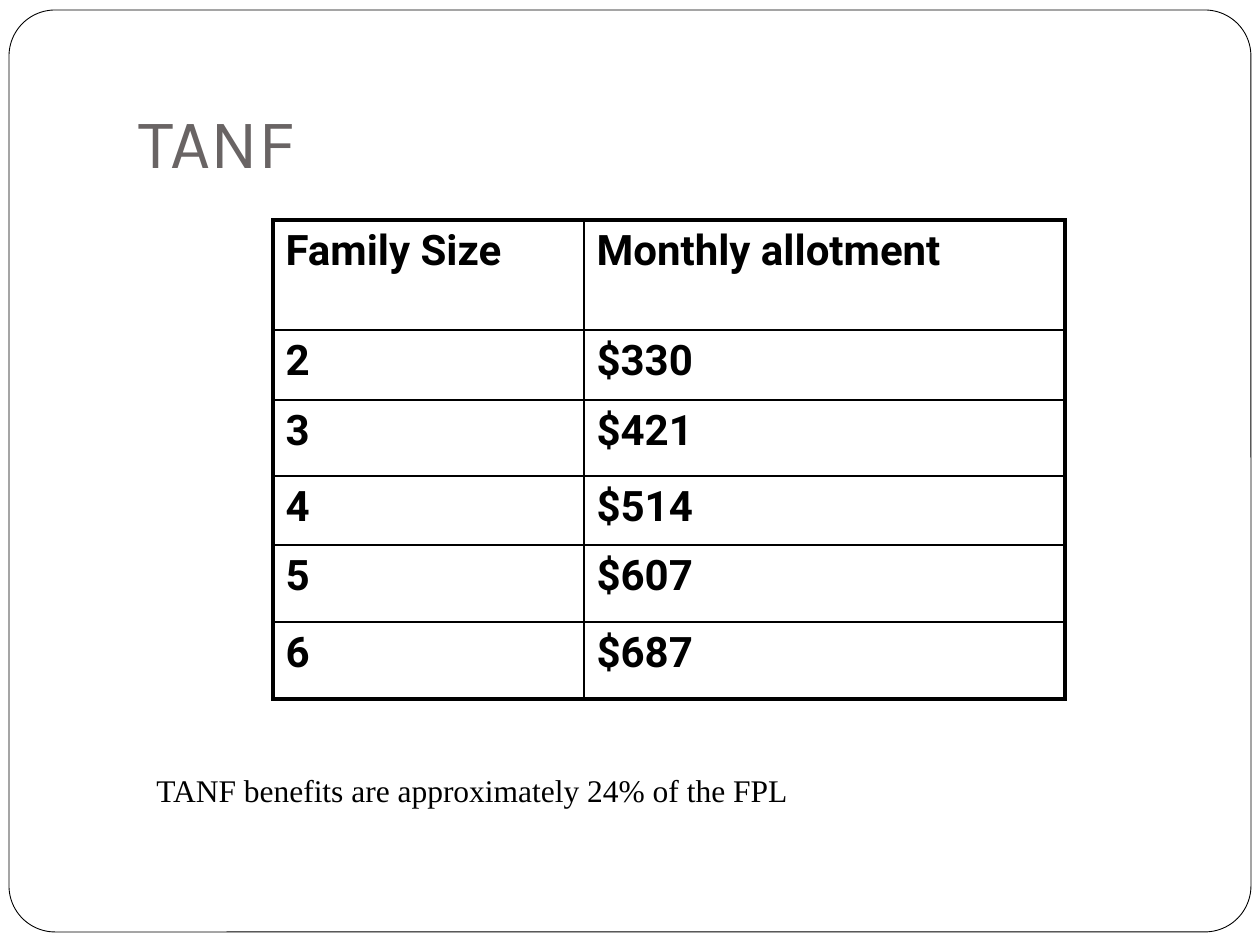
from lxml import etree
from pptx import Presentation
from pptx import util as u
from pptx.dml.color import RGBColor
from pptx.enum import shapes, text
from pptx.oxml import ns

PX = u.Inches(1) / 126
WHITE = RGBColor(0xFF, 0xFF, 0xFF)
BLACK = RGBColor(0, 0, 0)
GRAY = RGBColor(0x69, 0x64, 0x64)

ROWS = [
    ("Family Size", "Monthly allotment"),
    ("2", "$330"),
    ("3", "$421"),
    ("4", "$514"),
    ("5", "$607"),
    ("6", "$687"),
]
COL_WIDTHS = [311, 481]
ROW_HEIGHTS = [110, 70, 76, 69, 77, 77]
OUTER, INNER = 2.25, 1


def px(*lengths):
    return [u.Emu(round(n * PX)) for n in lengths]


def write(tf, content, font, size, color=BLACK, bold=False):
    r = tf.paragraphs[0].add_run()
    r.text = content
    r.font.name = font
    r.font.size = u.Pt(size)
    r.font.bold = bold
    r.font.color.rgb = color


def add_text(slide, box, content, anchor=text.MSO_ANCHOR.TOP, bottom=0.05, **fmt):
    tf = slide.shapes.add_textbox(*px(*box)).text_frame
    tf.word_wrap = True
    tf.vertical_anchor = anchor
    tf.margin_bottom = u.Inches(bottom)
    write(tf, content, **fmt)


def add_frame(slide):
    sp = slide.shapes.add_shape(shapes.MSO_SHAPE.ROUNDED_RECTANGLE, *px(9, 10, 1242, 922))
    sp.adjustments[0] = 0.05
    sp.shadow.inherit = False
    sp.fill.solid()
    sp.fill.fore_color.rgb = WHITE
    sp.line.color.rgb = BLACK
    sp.line.width = u.Pt(0.5)


def set_border(cell, side, points):
    tc_pr = cell._tc.get_or_add_tcPr()
    ln = etree.SubElement(tc_pr, ns.qn(f"a:ln{side}"), w=str(u.Pt(points)))
    fill = etree.SubElement(ln, ns.qn("a:solidFill"))
    etree.SubElement(fill, ns.qn("a:srgbClr"), val=str(BLACK))


def add_allotment_table(slide):
    last_row, last_col = len(ROWS) - 1, len(COL_WIDTHS) - 1
    box = px(273, 220, sum(COL_WIDTHS), sum(ROW_HEIGHTS))
    table = slide.shapes.add_table(len(ROWS), len(COL_WIDTHS), *box).table
    table.first_row = table.horz_banding = False
    for col, width in zip(table.columns, px(*COL_WIDTHS)):
        col.width = width
    for row, height in zip(table.rows, px(*ROW_HEIGHTS)):
        row.height = height
    for i, values in enumerate(ROWS):
        for j, value in enumerate(values):
            cell = table.cell(i, j)
            write(cell.text_frame, value, font="Roboto", size=24, bold=True)
            on_edge = {"L": j == 0, "R": j == last_col, "T": i == 0, "B": i == last_row}
            for side, is_outer in on_edge.items():
                set_border(cell, side, OUTER if is_outer else INNER)
            cell.fill.background()


def main():
    prs = Presentation()
    prs.slide_width, prs.slide_height = u.Inches(10), u.Inches(7.5)
    slide = prs.slides.add_slide(prs.slide_layouts[6])
    add_frame(slide)
    add_text(slide, (126, 38, 1071, 157), "TANF", anchor=text.MSO_ANCHOR.BOTTOM,
             bottom=0.1, font="Karla", size=40, color=GRAY)
    add_allotment_table(slide)
    add_text(slide, (144, 765, 833, 50), "TANF benefits are approximately 24% of the FPL",
             font="Times New Roman", size=18)
    prs.save("out.pptx")


if __name__ == "__main__":
    main()
